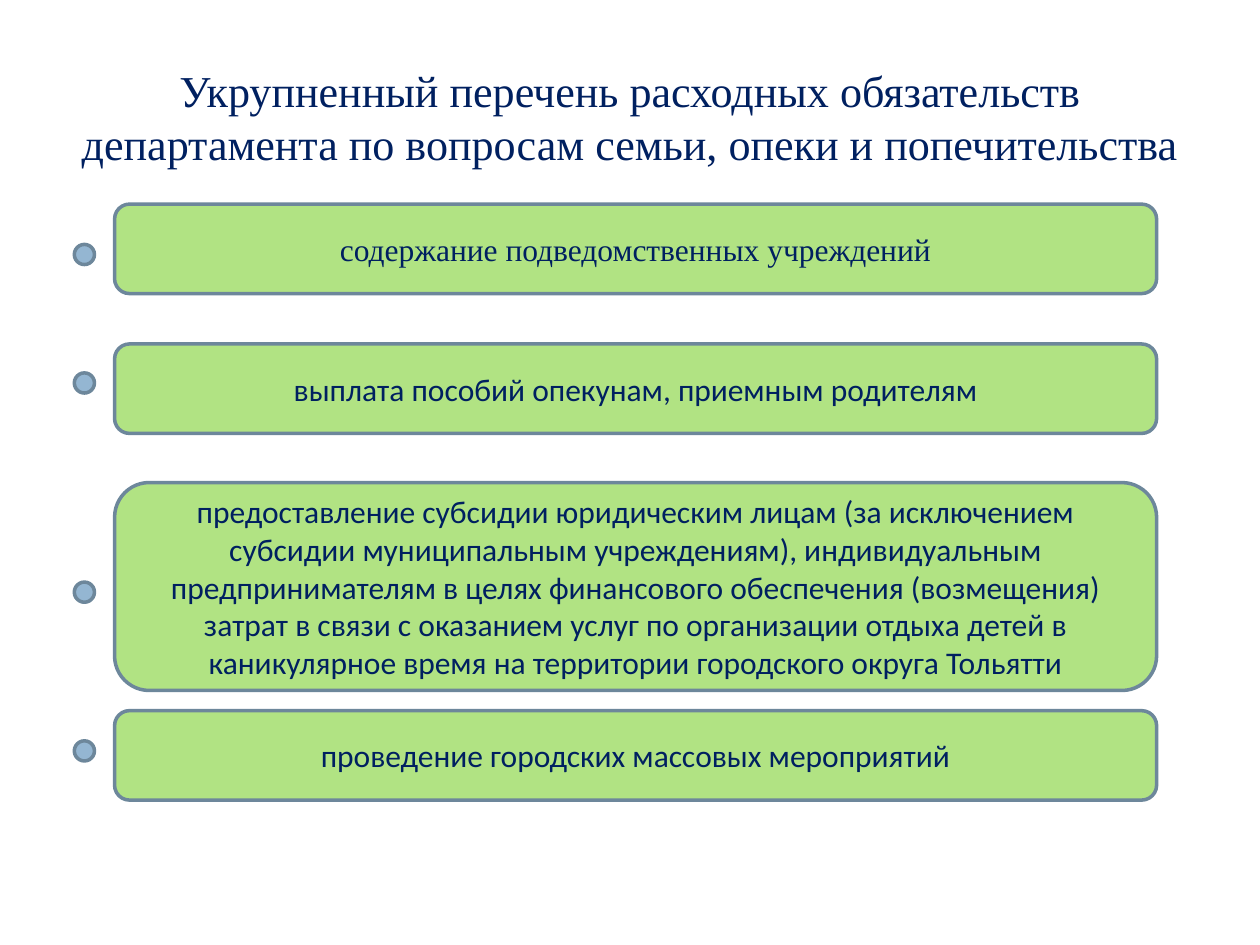
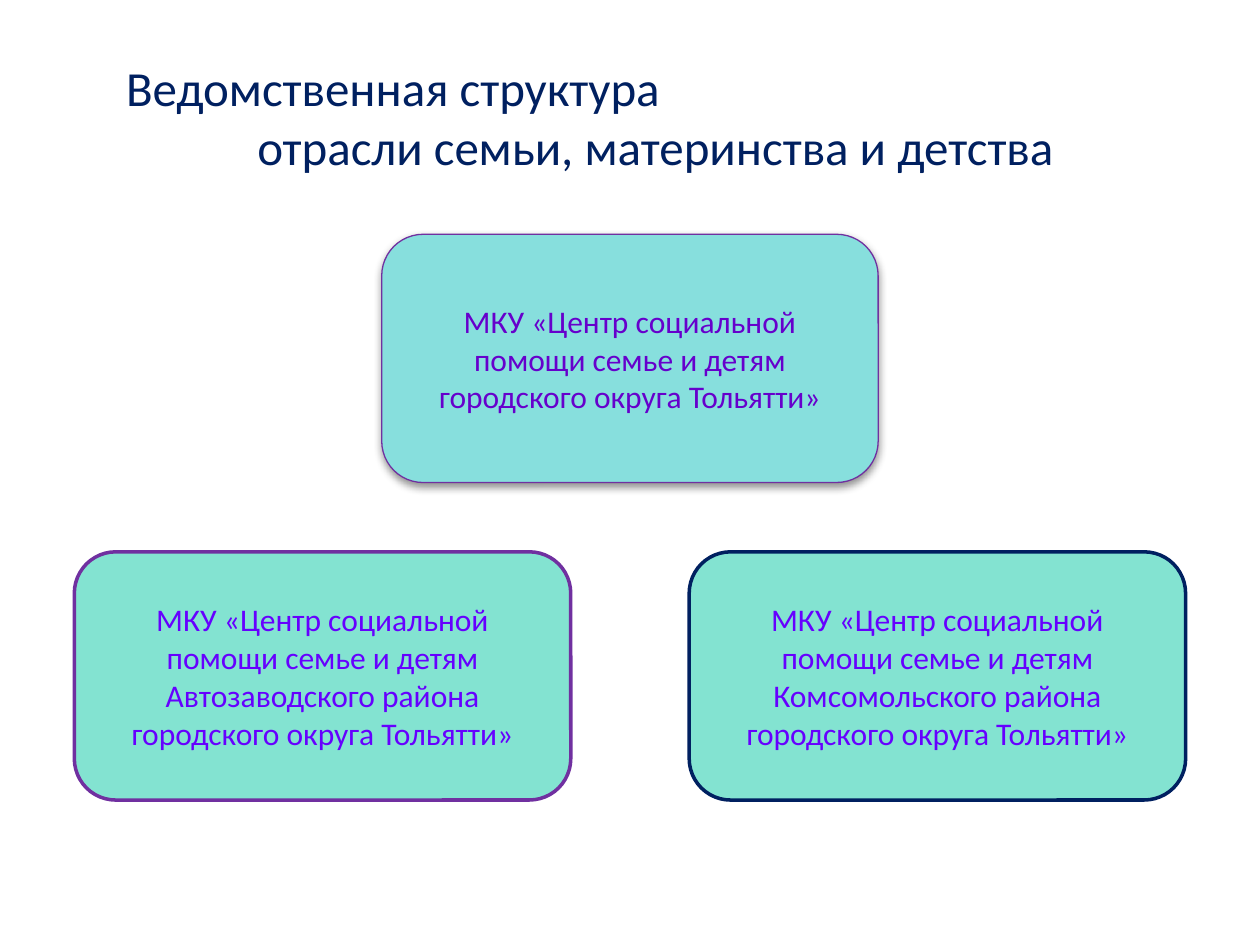
import dataclasses

import lxml.etree
import pptx
import pptx.dml.color
import pptx.enum.shapes
import pptx.enum.text
import pptx.oxml.ns
import pptx.util


@dataclasses.dataclass(frozen=True)
class Theme:
    navy: str = "002060"
    green: str = "B1E383"
    slate: str = "6D879B"
    marker_blue: str = "94B6D2"
    aqua: str = "87DFDD"
    mint: str = "83E3D1"
    purple: str = "7030A0"
    violet: str = "6600CC"
    bright_violet: str = "6600FF"
    sans: str = "Calibri"
    serif: str = "Times New Roman"
    body_size: float = 18
    long_title_size: float = 25.2
    title_size: float = 28
    outline: float = 2
    thin_outline: float = 0.75


theme = Theme()
Inches = pptx.util.Inches
Shapes = pptx.enum.shapes.MSO_SHAPE
color = pptx.dml.color.RGBColor.from_string


def write(shape, text, font, size, ink):
    """Fill a shape with centred, wrapped text; each line break starts a paragraph."""
    frame = shape.text_frame
    frame.text = text
    frame.word_wrap = True
    frame.auto_size = pptx.enum.text.MSO_AUTO_SIZE.NONE
    frame.vertical_anchor = pptx.enum.text.MSO_ANCHOR.MIDDLE
    for para in frame.paragraphs:
        para.alignment = pptx.enum.text.PP_ALIGN.CENTER
        for span in para.runs:
            span.font.name = font
            span.font.size = pptx.util.Pt(size)
            span.font.color.rgb = color(ink)


def add_figure(page, kind, left, top, width, height, fill, line, weight=theme.outline):
    figure = page.shapes.add_shape(
        kind, Inches(left), Inches(top), Inches(width), Inches(height))
    figure.shadow.inherit = False
    figure.fill.solid()
    figure.fill.fore_color.rgb = color(fill)
    figure.line.color.rgb = color(line)
    figure.line.width = pptx.util.Pt(weight)
    figure.text_frame.margin_left = figure.text_frame.margin_right = Inches(0.2)
    return figure


deck = pptx.Presentation()
deck.slide_width, deck.slide_height = Inches(10), Inches(7.5)
margin = 0.59
content_width = 10 - 2 * margin

headings = [
    ("Укрупненный перечень расходных обязательств департамента "
     "по вопросам семьи, опеки и попечительства", theme.serif, theme.long_title_size),
    ("Ведомственная структура\nотрасли семьи, материнства и детства",
     theme.sans, theme.title_size),
]
for text, font, size in headings:
    page = deck.slides.add_slide(deck.slide_layouts[5])
    title = page.shapes.title
    title.left, title.top = Inches(0.5), Inches(0.3)
    title.width, title.height = Inches(9), Inches(1.25)
    write(title, text, font, size, theme.navy)
duties_page, structure_page = deck.slides

# The first line of the second heading starts left of the centred one
opening = structure_page.shapes.title.text_frame.paragraphs[0]
opening.alignment = pptx.enum.text.PP_ALIGN.LEFT
opening.font.size = pptx.util.Pt(theme.title_size)
opening._p.get_or_add_pPr().set("marL", str(Inches(0.4)))

# List of duties: top of the bar, its height, top of its marker
bar_left, bar_width, bar_height = 0.91, 8.27, 0.71
marker_size = 0.16
duties = [
    (1.62, bar_height, 1.94, theme.serif, "содержание подведомственных учреждений"),
    (2.73, bar_height, 2.96, theme.sans, "выплата пособий опекунам, приемным родителям"),
    (3.83, 1.65, 4.62, theme.sans,
     "предоставление субсидии юридическим лицам (за исключением субсидии "
     "муниципальным учреждениям), индивидуальным предпринимателям в целях "
     "финансового обеспечения (возмещения) затрат в связи с оказанием услуг "
     "по организации отдыха детей в каникулярное время на территории "
     "городского округа Тольятти"),
    (5.64, bar_height, 5.88, theme.sans, "проведение городских массовых мероприятий"),
]
for top, height, marker_top, font, text in duties:
    bar = add_figure(duties_page, Shapes.ROUNDED_RECTANGLE, bar_left, top,
                     bar_width, height, theme.green, theme.slate)
    write(bar, text, font, theme.body_size, theme.navy)
for top, height, marker_top, font, text in duties:
    add_figure(duties_page, Shapes.FLOWCHART_CONNECTOR, margin, marker_top,
               marker_size, marker_size, theme.marker_blue, theme.slate)

# Structure: one centre above, two district centres below at the margins
card_width, card_height = 3.94, 1.97
spare = content_width - card_width
centres = [
    (0.5, 1.86, "", theme.aqua, theme.purple, theme.thin_outline, theme.violet),
    (0, 4.38, "Автозаводского района ", theme.mint, theme.purple,
     theme.outline, theme.bright_violet),
    (1, 4.38, "Комсомольского района ", theme.mint, theme.navy,
     theme.outline, theme.bright_violet),
]
cards = []
for share, top, district, fill, line, weight, ink in centres:
    card = add_figure(structure_page, Shapes.ROUNDED_RECTANGLE, margin + share * spare,
                      top, card_width, card_height, fill, line, weight)
    write(card, f"МКУ «Центр социальной помощи семье и детям {district}"
          "городского округа Тольятти»", theme.sans, theme.body_size, ink)
    cards.append(card)

# Soft shadow under the main centre
qn = pptx.oxml.ns.qn
effects = cards[0]._element.spPr.find(qn("a:effectLst"))
shadow = lxml.etree.SubElement(
    effects, qn("a:outerShdw"), blurRad=str(pptx.util.Pt(5)),
    dist=str(pptx.util.Pt(2)), dir=str(90 * 60000), rotWithShape="0")
shade = lxml.etree.SubElement(shadow, qn("a:srgbClr"), val="000000")
lxml.etree.SubElement(shade, qn("a:alpha"), val="43000")

deck.save("out.pptx")
